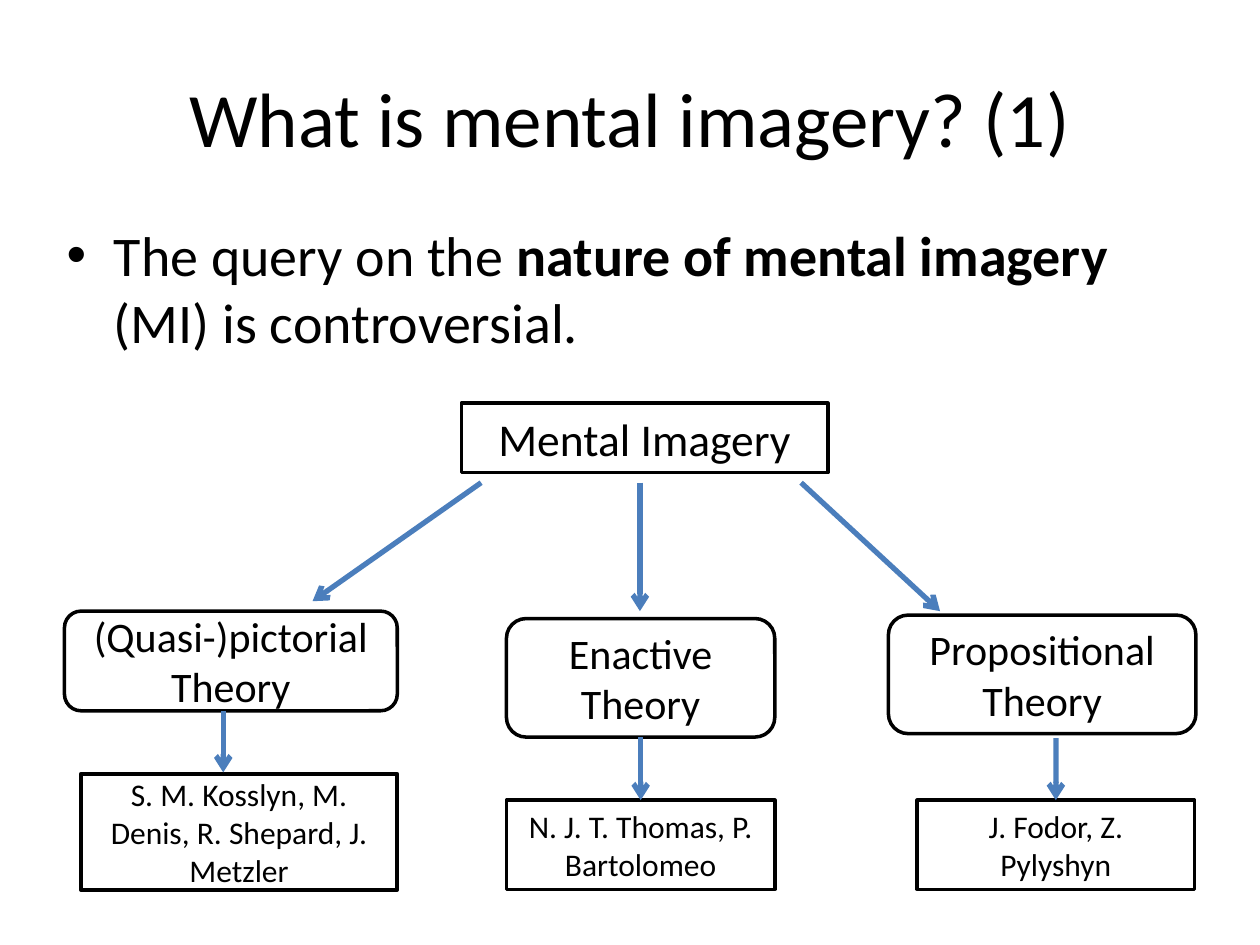
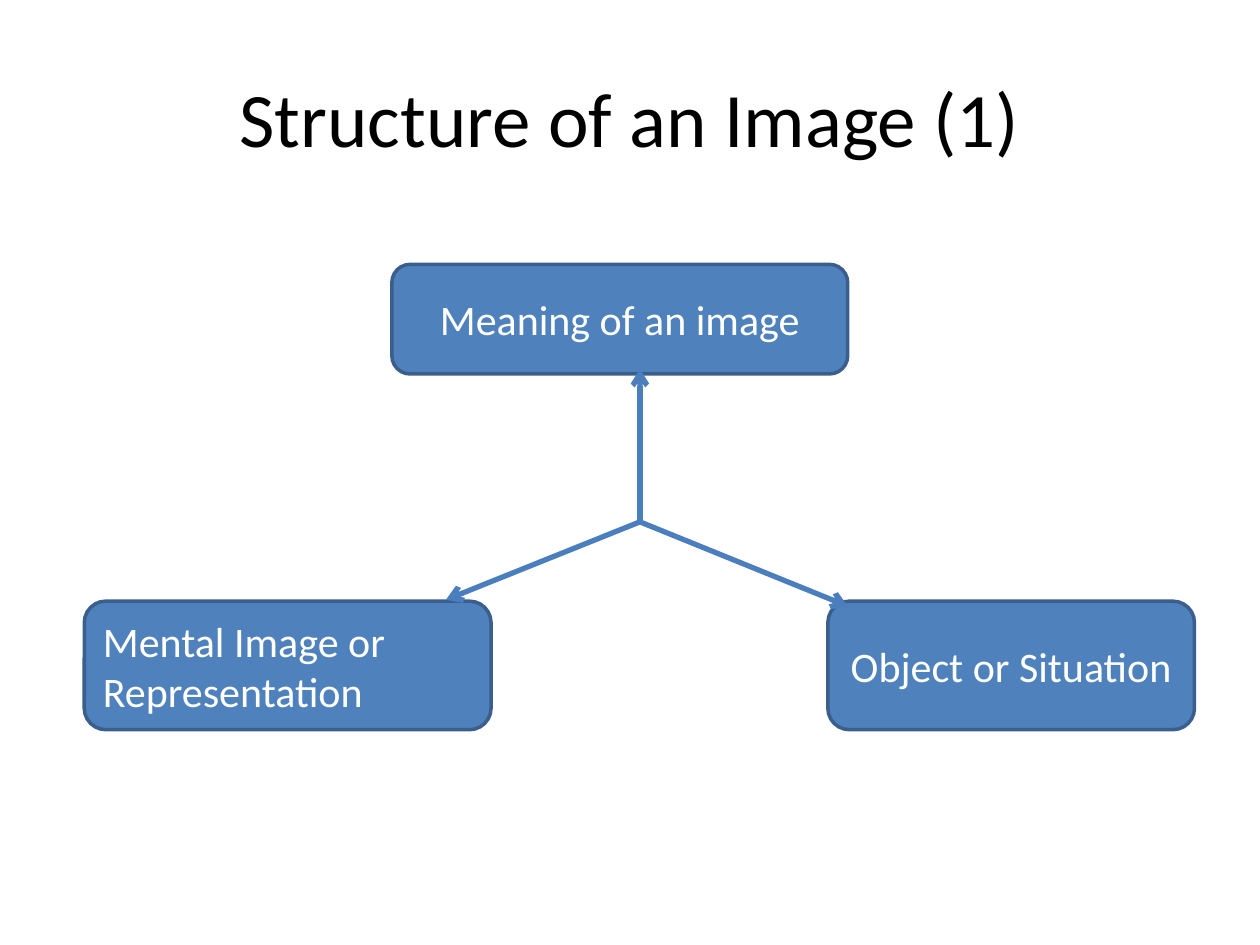
from lxml.etree import SubElement
from pptx import Presentation
from pptx.dml.color import RGBColor
from pptx.enum.shapes import MSO_CONNECTOR, MSO_SHAPE
from pptx.enum.text import MSO_ANCHOR, PP_ALIGN
from pptx.oxml.ns import qn
from pptx.util import Cm, Pt

# Shared look
FONT = "Calibri"
BLACK, WHITE, ARROW = "000000", "FFFFFF", "4B7EBC"
PLAIN = {"fill": WHITE, "line": BLACK, "text": BLACK}
BLUE = {"fill": "4F81BD", "line": "3A5F8C", "text": WHITE}
RECT, ROUND = MSO_SHAPE.RECTANGLE, MSO_SHAPE.ROUNDED_RECTANGLE
TOP, BOTTOM = 0, 2
TITLE = (1.27, 0.76, 22.86, 3.18)
BODY = (1.09, 4.32, 22.86, 14.2)


def color(code):
    return RGBColor.from_string(code)


def apply(item, values):
    for name, value in values.items():
        setattr(item, name, value)


def place(shape, area):
    names = ("left", "top", "width", "height")
    apply(shape, dict(zip(names, map(Cm, area))))


def style(run, size, tint=BLACK, bold=False):
    apply(run.font, {"name": FONT, "size": Pt(size), "bold": bold})
    run.font.color.rgb = color(tint)


def start(deck, layout, title):
    """Add a slide with its title."""
    slide = deck.slides.add_slide(deck.slide_layouts[layout])
    head = slide.shapes.title
    place(head, TITLE)
    head.text_frame.vertical_anchor = MSO_ANCHOR.MIDDLE
    para = head.text_frame.paragraphs[0]
    para.alignment = PP_ALIGN.CENTER
    run = para.add_run()
    run.text = title
    style(run, 44)
    return slide


def bullet(slide, parts):
    """Fill the body with one item made of (text, bold) parts."""
    body = slide.placeholders[1]
    place(body, BODY)
    para = body.text_frame.paragraphs[0]
    for text, bold in parts:
        run = para.add_run()
        run.text = text
        style(run, 32, bold=bold)


def box(slide, kind, area, text, size, look, align=PP_ALIGN.CENTER):
    shape = slide.shapes.add_shape(kind, *map(Cm, area))
    shape.shadow.inherit = False
    shape.fill.solid()
    shape.fill.fore_color.rgb = color(look["fill"])
    shape.line.color.rgb = color(look["line"])
    shape.line.width = Pt(2)
    frame = shape.text_frame
    apply(frame, {"word_wrap": True, "vertical_anchor": MSO_ANCHOR.MIDDLE})
    para = frame.paragraphs[0]
    para.alignment = align
    run = para.add_run()
    run.text = text
    style(run, size, look["text"])
    return shape


def arrow(slide, tail, tip, source=None, target=None):
    """Draw an arrow, joined to the boxes given."""
    line = slide.shapes.add_connector(
        MSO_CONNECTOR.STRAIGHT, *map(Cm, tail + tip))
    line.line.color.rgb = color(ARROW)
    line.line.width = Pt(3)
    SubElement(line.line._get_or_add_ln(), qn("a:tailEnd"), type="arrow")
    SubElement(line._element.spPr, qn("a:effectLst"))
    if source:
        line.begin_connect(source, BOTTOM)
    if target:
        line.end_connect(target, TOP)


def theories(deck):
    slide = start(deck, 1, "What is mental imagery? (1)")
    bullet(slide, [("The query on the ", False),
                   ("nature of mental imagery ", True),
                   ("(MI) is controversial.", False)])
    box(slide, RECT, (9.3, 8.13, 7.39, 1.4), "Mental Imagery", 26, PLAIN)

    # Arrows from the topic to each theory
    for x, tip in ((9.7, (6.3, 12.12)), (16.15, (18.95, 12.32)),
                   (12.9, (12.9, 12.32))):
        arrow(slide, (x, 9.73), tip)

    # Theories and the people behind them
    theory = [
        box(slide, ROUND, area, text, 24, PLAIN) for area, text in (
            ((1.3, 12.32, 6.71, 2.01), "(Quasi-)pictorial Theory"),
            ((10.21, 12.47, 5.41, 2.39), "Enactive Theory"),
            ((17.91, 12.4, 6.2, 2.39), "Propositional Theory"))]
    people = [
        box(slide, RECT, area, text, 18, PLAIN) for area, text in (
            ((1.63, 15.6, 6.38, 2.34),
             "S. M. Kosslyn, M. Denis, R. Shepard, J. Metzler"),
            ((10.21, 16.13, 5.41, 1.8), "N. J. T. Thomas, P. Bartolomeo"),
            ((18.49, 16.13, 5.59, 1.8), "J. Fodor, Z. Pylyshyn"))]
    arrow(slide, (4.5, 14.33), (4.5, 15.57))
    arrow(slide, (12.9, 14.88), (12.9, 16.13), theory[1], people[1])
    arrow(slide, (21.29, 14.88), (21.29, 16.13), target=people[2])


def structure(deck):
    slide = start(deck, 5, "Structure of an Image (1)")
    for area, text, align in (
            ((7.9, 5.33, 9.19, 2.21), "Meaning of an image", PP_ALIGN.CENTER),
            ((1.7, 12.12, 8.2, 2.59), "Mental Image or Representation",
             PP_ALIGN.LEFT),
            ((16.69, 12.12, 7.39, 2.59), "Object or Situation",
             PP_ALIGN.CENTER)):
        box(slide, ROUND, area, text, 24, BLUE, align)

    # Arrows from the hub to each corner
    hub = (12.9, 10.52)
    for tip in ((12.9, 7.44), (8.99, 12.09), (17.09, 12.22)):
        arrow(slide, hub, tip)


def main():
    deck = Presentation()
    apply(deck, {"slide_width": Cm(25.4), "slide_height": Cm(19.05)})
    theories(deck)
    structure(deck)
    deck.save("out.pptx")


if __name__ == "__main__":
    main()
